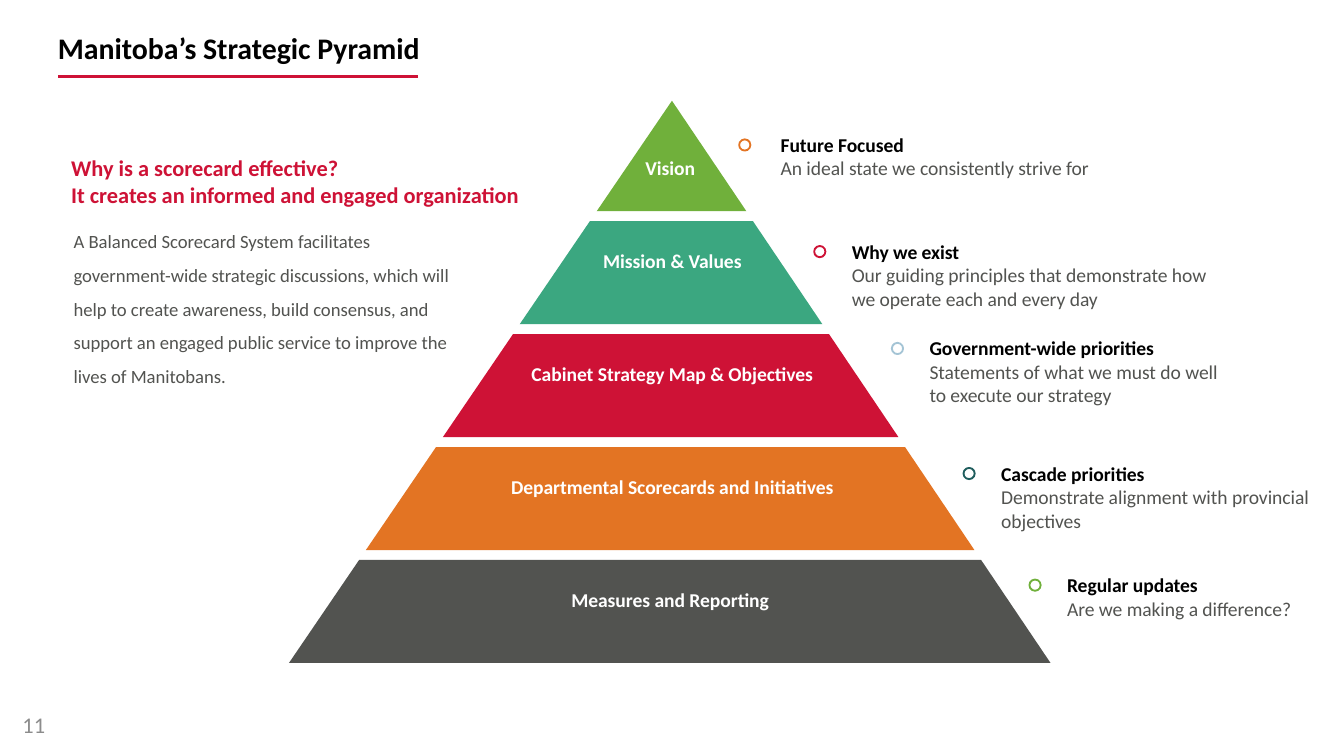
from lxml import etree
from pptx import Presentation
from pptx.dml.color import RGBColor
from pptx.enum.shapes import MSO_CONNECTOR, MSO_SHAPE
from pptx.enum.text import MSO_ANCHOR, MSO_AUTO_SIZE, PP_ALIGN
from pptx.oxml.ns import qn
from pptx.util import Pt

LEFT, CENTER = PP_ALIGN.LEFT, PP_ALIGN.CENTER
TOP, MIDDLE = MSO_ANCHOR.TOP, MSO_ANCHOR.MIDDLE
GROW, NO_FIT = MSO_AUTO_SIZE.SHAPE_TO_FIT_TEXT, MSO_AUTO_SIZE.NONE
STRAIGHT, OVAL = MSO_CONNECTOR.STRAIGHT, MSO_SHAPE.OVAL

RED, ORANGE, GREEN = "CE1236", "E37423", "70B03B"
GREY, BLACK, WHITE = "525350", "000000", "FFFFFF"

TIERS = [
    ("Vision ", GREEN),
    ("Mission & Values", "3BA780"),
    ("Cabinet Strategy Map & Objectives", RED),
    ("Departmental Scorecards and Initiatives", ORANGE),
    ("Measures and Reporting ", GREY),
]

CALLOUTS = [
    ((396, 67.7, 204, 45), 15.1, ORANGE, "Future Focused",
     "An ideal state we consistently strive for"),
    ((436.2, 124.8, 219, 45), 13.1, RED, "Why we exist",
     "Our guiding principles that demonstrate how we operate each and every day"),
    ((477.8, 176.7, 183, 45), 13.1, "A4C4D5", "Government-wide priorities",
     "Statements of what we must do well to execute our strategy"),
    ((516.2, 243.7, 199, 45), 13.1, "1F5D5D", "Cascade priorities",
     "Demonstrate alignment with provincial objectives"),
    ((551.5, 303.5, 183, 32.4), 13.1, GREEN, "Regular updates",
     "Are we making a difference?"),
]


def rgb(value):
    return RGBColor.from_string(value)


def fill_text(sp, lines, size, align=LEFT, anchor=TOP, fit=GROW, wrap=True, spacing=None):
    tf = sp.text_frame
    for name, value in dict(word_wrap=wrap, auto_size=fit, vertical_anchor=anchor).items():
        setattr(tf, name, value)
    for i, (text, color, bold) in enumerate(lines):
        p = tf.add_paragraph() if i else tf.paragraphs[0]
        p.alignment = align
        p.line_spacing = spacing
        r = p.add_run()
        r.text = text
        for name, value in dict(name="Calibri", size=Pt(size), bold=bold).items():
            setattr(r.font, name, value)
        r.font.color.rgb = rgb(color)


def add_text(s, box, lines, size, **options):
    sp = s.shapes.add_textbox(*map(Pt, box))
    fill_text(sp, lines, size, **options)


def add_heading(s, box, rule_width):
    x, y, w, h = box
    sp = s.shapes.title
    for name, value in dict(left=x, top=y, width=w, height=h).items():
        setattr(sp, name, Pt(value))
    for side in ("left", "top", "right", "bottom"):
        setattr(sp.text_frame, f"margin_{side}", 0)
    fill_text(sp, [("Manitoba’s Strategic Pyramid", BLACK, True)], 16,
              anchor=MIDDLE, fit=NO_FIT)
    rule_y = y + h + 3
    rule = s.shapes.add_connector(STRAIGHT, Pt(x + rule_width), Pt(rule_y), Pt(x), Pt(rule_y))
    rule.line.color.rgb = rgb(RED)
    rule.line.width = Pt(2)
    etree.SubElement(rule._element.spPr, qn("a:effectLst"))


def add_pyramid(s, box, apex, band=55.2, gap=5.3):
    x, y, w, h = box
    pitch = band + gap

    def edges(level):
        part = (level - y) / h
        return apex + (x - apex) * part, apex + (x + w - apex) * part

    for i, (label, color) in enumerate(TIERS):
        bottom = y + h - (len(TIERS) - 1 - i) * pitch
        top = bottom - band if i else y
        (top_l, top_r), (low_l, low_r) = edges(top), edges(bottom)
        corners = [(top_r, top), (low_r, bottom), (low_l, bottom)]
        builder = s.shapes.build_freeform(Pt(top_l), Pt(top))
        builder.add_line_segments([(Pt(a), Pt(b)) for a, b in corners[0 if i else 1:]])
        sp = builder.convert_to_shape()
        sp.shadow.inherit = False
        sp.fill.solid()
        sp.fill.fore_color.rgb = rgb(color)
        sp.line.fill.background()
        label_top = top + (11.2 if i else 26)
        add_text(s, (apex - 142, label_top, 284.4, 20), [(label, WHITE, True)],
                 10.5, align=CENTER)


def add_intro(s, box):
    x, y, w, h = box
    add_text(s, (x, y, w, 36),
             [("Why is a scorecard effective?", RED, True),
              ("It creates an informed and engaged organization", RED, True)],
             12, wrap=False)
    body = ("A Balanced Scorecard System facilitates government-wide strategic "
            "discussions, which will help to create awareness, build consensus, and "
            "support an engaged public service to improve the lives of Manitobans.")
    add_text(s, (x + 1.4, y + 34.6, 220.3, h - 34.6), [(body, GREY, False)], 10, spacing=1.5)


def add_callout(s, box, indent, color, heading, detail, dot=6):
    x, y, w, h = box
    add_text(s, (x + indent, y, w - indent, h),
             [(heading, BLACK, True), (detail, GREY, False)], 10.5)
    sp = s.shapes.add_shape(OVAL, Pt(x), Pt(y + 7), Pt(dot), Pt(dot))
    sp.shadow.inherit = False
    sp.fill.solid()
    sp.fill.fore_color.rgb = rgb(WHITE)
    sp.line.color.rgb = rgb(color)
    sp.line.width = Pt(1)


def add_page_number(s, box):
    add_text(s, box, [("11", "8C8C8C", False)], 12, anchor=MIDDLE, fit=NO_FIT)


def main():
    prs = Presentation()
    prs.slide_width, prs.slide_height = Pt(720), Pt(405)
    s = prs.slides.add_slide(prs.slide_layouts[5])
    add_heading(s, (31, 13, 461.5, 25), 193)
    add_page_number(s, (5, 377.3, 167.8, 21.6))
    add_pyramid(s, (154.8, 54, 408, 301.2), 360)
    add_intro(s, (31, 79.2, 257.8, 132.5))
    for callout in CALLOUTS:
        add_callout(s, *callout)
    prs.save("out.pptx")


if __name__ == "__main__":
    main()
